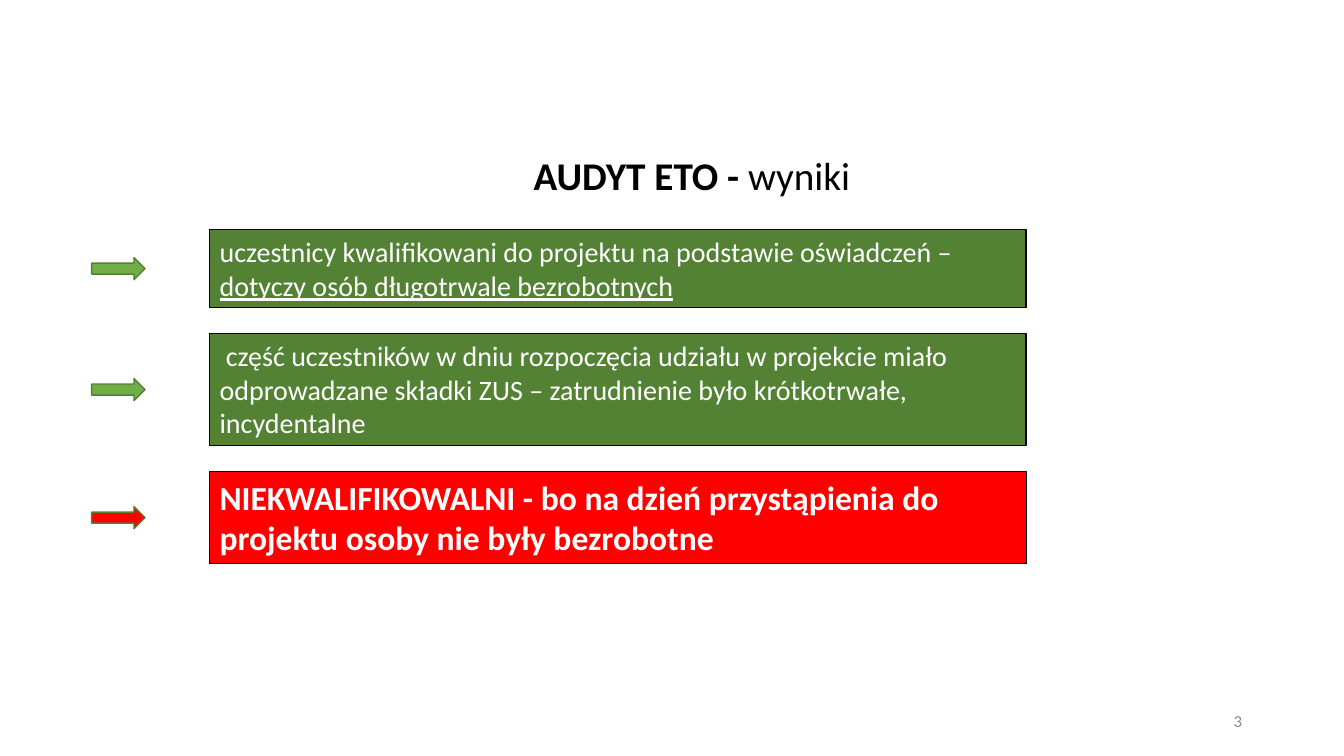
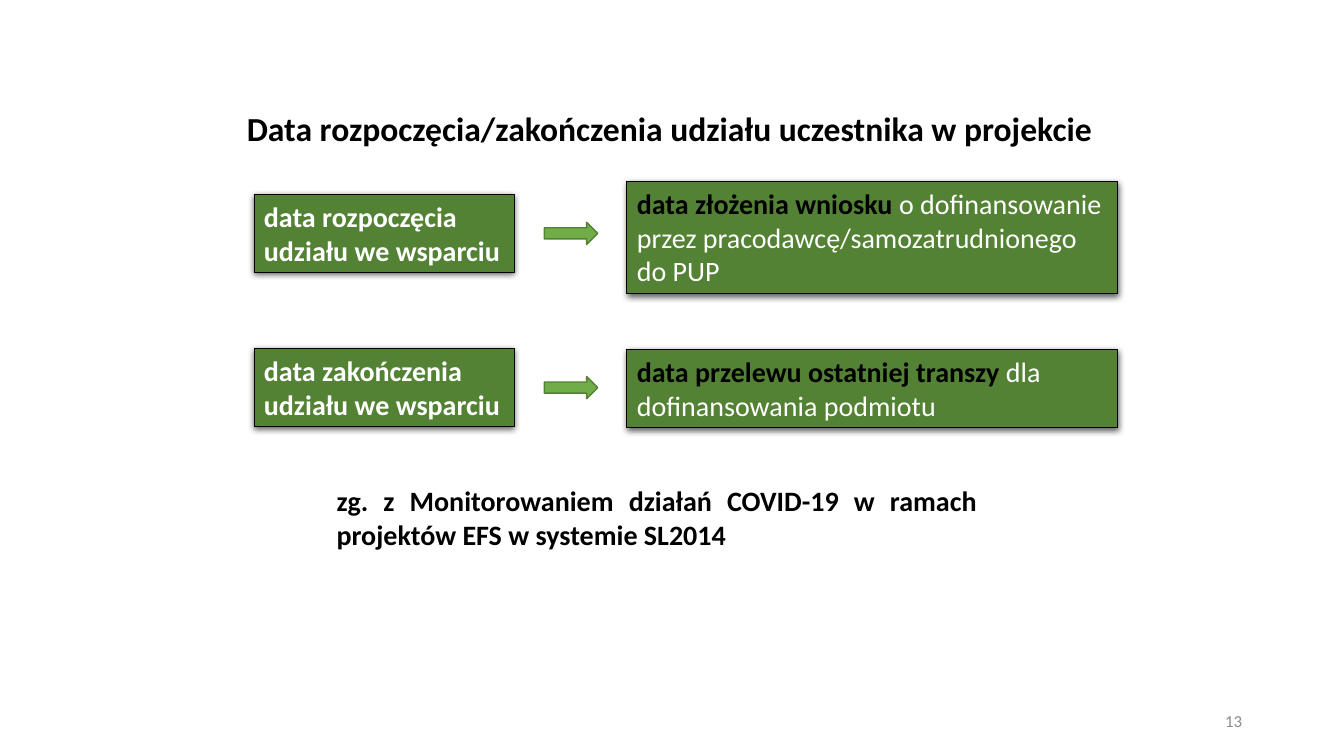
import dataclasses
import pptx
import pptx.dml.color
import pptx.enum.shapes
import pptx.enum.text
import pptx.oxml
import pptx.oxml.ns
import pptx.util

ALIGN = pptx.enum.text.PP_ALIGN
ANCHOR = pptx.enum.text.MSO_ANCHOR
SHAPES = pptx.enum.shapes.MSO_SHAPE
CELL = pptx.util.Inches(0.1)
COLUMNS, ROWS = 133.33, 75


@dataclasses.dataclass(frozen=True)
class Theme:
    """Colours and type sizes of the deck."""
    font: str = "Calibri"
    black: str = "000000"
    white: str = "FFFFFF"
    grey: str = "8C8C8C"
    green: str = "548235"
    red: str = "FF0000"
    arrow: str = "70AD47"
    arrow_edge: str = "538035"
    heading: int = 28
    strong: int = 24
    body: int = 20
    number: int = 12


@dataclasses.dataclass(frozen=True)
class Box:
    """Area measured in grid columns and rows."""
    left: float
    top: float
    width: float
    height: float

    @property
    def middle(self):
        """Row halfway down the box."""
        return self.top + self.height / 2

    def inner(self, left, width, height, drop=0):
        """Area inside this one, centred on its middle row."""
        return Box(self.left + left, self.middle - height / 2 + drop, width, height)

    def lengths(self):
        """Position and size in slide units."""
        return [round(v * CELL) for v in (self.left, self.top, self.width, self.height)]


THEME = Theme()
ARROW = (5.3, 2.2)
SHADOW = (
    '<a:outerShdw %s blurRad="57150" dist="19050" dir="5400000" algn="ctr" rotWithShape="0">'
    '<a:srgbClr val="%s"><a:alpha val="63000"/></a:srgbClr></a:outerShdw>'
)


def rgb(colour):
    """Colour object for a hex string."""
    return pptx.dml.color.RGBColor.from_string(colour)


def write(shape, runs, size, colour, bold=False, align=ALIGN.LEFT, anchor=ANCHOR.TOP):
    """Write one paragraph; each run is a text and its own font settings."""
    frame = shape.text_frame
    frame.word_wrap = True
    frame.vertical_anchor = anchor
    paragraph = frame.paragraphs[0]
    paragraph.alignment = align
    font = paragraph.font
    font.name, font.size, font.bold = THEME.font, pptx.util.Pt(size), bold
    font.color.rgb = rgb(colour)
    for text, settings in runs:
        run = paragraph.add_run()
        run.text = text
        run.font.bold = settings.get("bold")
        run.font.underline = settings.get("underline")
        if "colour" in settings:
            run.font.color.rgb = rgb(settings["colour"])


def label(slide, box, runs, size, colour=THEME.black, **style):
    """Place text without a frame."""
    write(slide.shapes.add_textbox(*box.lengths()), runs, size, colour, **style)


def outlined(slide, kind, box, fill, edge, weight):
    """Place a filled, outlined preset shape."""
    shape = slide.shapes.add_shape(kind, *box.lengths())
    shape.shadow.inherit = False
    shape.fill.solid()
    shape.fill.fore_color.rgb = rgb(fill)
    shape.line.color.rgb = rgb(edge)
    shape.line.width = pptx.util.Pt(weight)
    return shape


def panel(slide, box, runs, fill=THEME.green, weight=1, raised=False, size=THEME.body, bold=False):
    """Place a coloured panel of white text, raised by a shadow on request."""
    shape = outlined(slide, SHAPES.RECTANGLE, box, fill, THEME.black, weight)
    if raised:
        effects = shape.element.spPr.find(pptx.oxml.ns.qn("a:effectLst"))
        effects.append(pptx.oxml.parse_xml(SHADOW % (pptx.oxml.ns.nsdecls("a"), THEME.black)))
    write(shape, runs, size, THEME.white, bold)


def arrow(slide, box, fill=THEME.arrow):
    """Place a right arrow."""
    outlined(slide, SHAPES.RIGHT_ARROW, box, fill, THEME.arrow_edge, 1)


def page(deck, number):
    """Add a blank slide with its number."""
    slide = deck.slides.add_slide(deck.slide_layouts[6])
    label(slide, Box(94.2, 69.5, 30, 4), [(number, {})], THEME.number, THEME.grey,
          align=ALIGN.RIGHT, anchor=ANCHOR.MIDDLE)
    return slide


def findings(slide, area, gap, rows):
    """Stack panels down the area, each with an arrow in the left margin."""
    top, indent = area.top, 11.7
    for height, runs, arrow_fill, style in rows:
        row = Box(area.left, top, area.width, height)
        panel(slide, row.inner(indent, area.width - indent, height), runs, **style)
        arrow(slide, row.inner(0, *ARROW), arrow_fill)
        top += height + gap


def date_rules(slide, area, rows):
    """Share the area among rows that lead from an event to its date."""
    pitch = area.height / len(rows)
    for index, (event, date, height, drop) in enumerate(rows):
        row = Box(area.left, area.top + index * pitch, area.width, pitch)
        panel(slide, row.inner(0, 25.8, 7.7), [(event, {})], weight=0.75, raised=True, bold=True)
        panel(slide, row.inner(37, 48.7, height, drop), date, weight=0.75, raised=True)
        arrow(slide, row.inner(28.8, *ARROW))


def audit_slide(deck):
    """Build the slide of audit results."""
    slide = page(deck, "3")
    label(slide, Box(41.5, 14.5, 54.3, 5.7), [("AUDYT ETO - ", {"bold": True}), ("wyniki", {})],
          THEME.heading, align=ALIGN.CENTER)
    findings(slide, Box(9.1, 22.8, 92.7, 33), 2.6, [
        (7.7, [("uczestnicy kwalifikowani do projektu na podstawie oświadczeń – ", {}),
               ("dotyczy osób długotrwale bezrobotnych", {"underline": True})], THEME.arrow, {}),
        (11.1, [(" część uczestników w dniu rozpoczęcia udziału w projekcie miało odprowadzane "
                 "składki ZUS – zatrudnienie było krótkotrwałe, incydentalne", {})],
         THEME.arrow, {}),
        (9.1, [("NIEKWALIFIKOWALNI - bo na dzień przystąpienia do projektu osoby nie były "
                "bezrobotne", {})], THEME.red,
         {"fill": THEME.red, "weight": 0.5, "size": THEME.strong, "bold": True}),
    ])


def dates_slide(deck):
    """Build the slide of start and end dates."""
    slide = page(deck, "13")
    label(slide, Box(23.5, 10.2, 87.4, 5),
          [("Data rozpoczęcia/zakończenia udziału uczestnika w projekcie", {})],
          THEME.strong, bold=True)
    key = {"bold": True, "colour": THEME.black}
    date_rules(slide, Box(25.2, 15.5, 85.7, 30.6), [
        ("data rozpoczęcia udziału we wsparciu",
         [("data złożenia wniosku ", key),
          ("o dofinansowanie przez pracodawcę/samozatrudnionego do PUP", {})], 11.1, 0.4),
        ("data zakończenia udziału we wsparciu",
         [("data przelewu ostatniej transzy ", key), ("dla dofinansowania podmiotu", {})],
         7.7, 0.1),
    ])
    label(slide, Box(32.4, 47.5, 65.5, 7.7),
          [("zg. z Monitorowaniem działań COVID-19 w ramach projektów EFS w systemie SL2014", {})],
          THEME.body, bold=True, align=ALIGN.JUSTIFY)


def main():
    """Build and save the deck."""
    deck = pptx.Presentation()
    deck.slide_width, deck.slide_height = round(COLUMNS * CELL), round(ROWS * CELL)
    audit_slide(deck)
    dates_slide(deck)
    deck.save("out.pptx")


if __name__ == "__main__":
    main()
